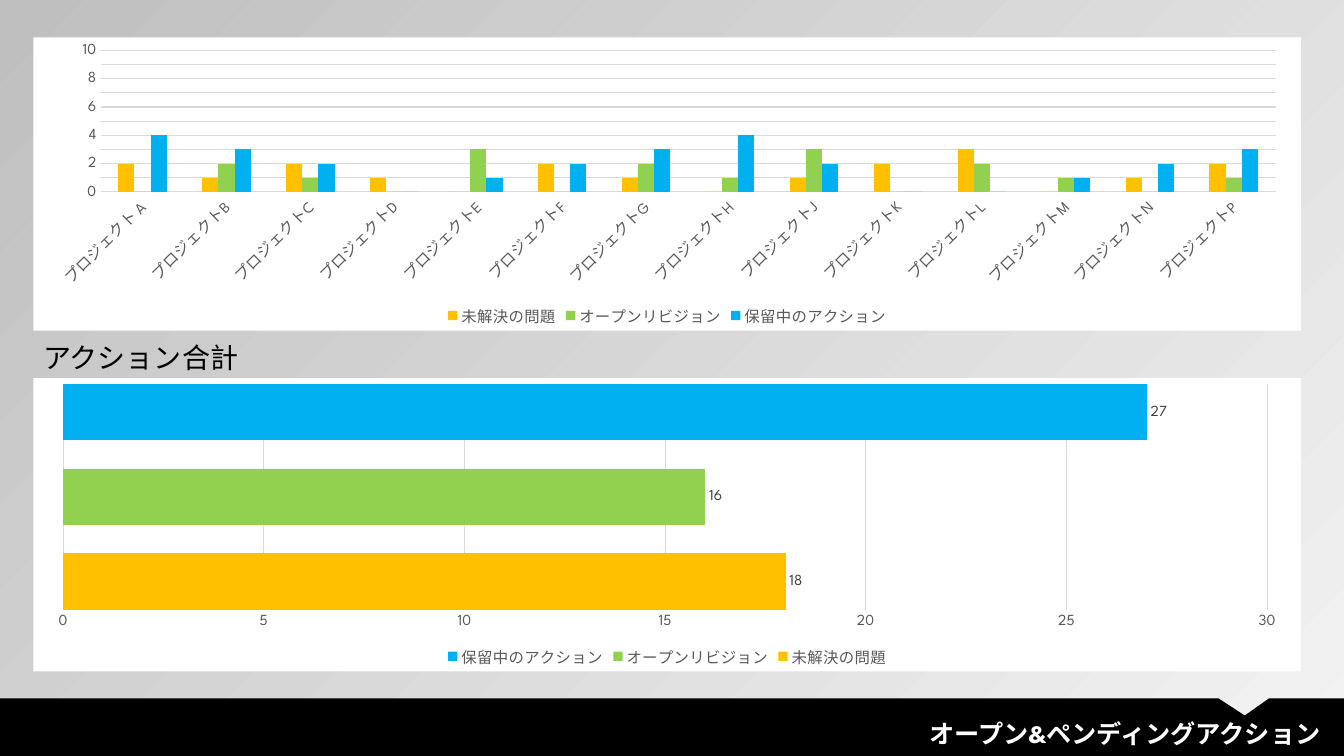
from dataclasses import dataclass

from lxml import etree
from pptx import Presentation
from pptx import util as u
from pptx.chart.data import CategoryChartData
from pptx.dml.color import RGBColor
from pptx.enum import chart as ch
from pptx.enum import text
from pptx.oxml import parse_xml
from pptx.oxml.ns import nsdecls, qn


@dataclass(frozen=True)
class Theme:
    font: str = "League Spartan"
    black: str = "000000"
    white: str = "FFFFFF"
    axis_text: str = "595959"
    label_text: str = "404040"
    grid: str = "D9D9D9"
    backdrop_light: str = "F2F2F2"
    backdrop_dark: str = "BFBFBF"
    issues: str = "FFC000"
    revisions: str = "92D050"
    actions: str = "00B0F0"
    title_size: int = 18
    heading_size: int = 20
    chart_size: int = 11


THEME = Theme()
WIDTH, HEIGHT = u.Cm(33.87), u.Cm(19.05)
PANEL_LEFT, PANEL_WIDTH, PANEL_HEIGHT = u.Cm(0.84), u.Cm(31.95), u.Cm(7.39)

PROJECTS = ["プロジェクト A"] + [f"プロジェクト{letter}" for letter in "BCDEFGHJKLMNP"]
# Name, colour and count per project
MEASURES = [
    ("未解決の問題", THEME.issues, [2, 1, 2, 1, 0, 2, 1, 0, 1, 2, 3, 0, 1, 2]),
    ("オープンリビジョン", THEME.revisions, [0, 2, 1, 0, 3, 0, 2, 1, 3, 0, 2, 1, 0, 1]),
    ("保留中のアクション", THEME.actions, [4, 3, 2, 0, 1, 2, 3, 4, 2, 0, 0, 1, 2, 3]),
]
TOTALS = [(name, color, [sum(counts)]) for name, color, counts in MEASURES]


def rgb(color):
    return RGBColor.from_string(color)


def style_font(font, size, color, bold=False):
    font.name, font.size, font.bold = THEME.font, u.Pt(size), bold
    font.color.rgb = rgb(color)


def paint_background(slide):
    fill = slide.background.fill
    fill.gradient()
    fill.gradient_angle = 135
    colors = (THEME.backdrop_light, THEME.backdrop_dark)
    for stop, color, position in zip(fill.gradient_stops, colors, (0, 1)):
        stop.color.rgb = rgb(color)
        stop.position = position


def add_banner(slide):
    """Black footer band with a notch in its upper edge."""
    top = u.Cm(17.6)
    builder = slide.shapes.build_freeform(0, top)
    builder.add_line_segments([
        (u.Cm(30.71), top), (u.Cm(31.37), u.Cm(18.03)), (u.Cm(31.98), top),
        (WIDTH, top), (WIDTH, HEIGHT), (0, HEIGHT),
    ])
    banner = builder.convert_to_shape()
    banner.shadow.inherit = False
    banner.fill.solid()
    banner.fill.fore_color.rgb = rgb(THEME.black)
    banner.line.fill.background()
    return banner


def write_text(shape, words, size, color, align, wrap, bold=False):
    frame = shape.text_frame
    frame.text = words
    frame.word_wrap = wrap
    frame.auto_size = text.MSO_AUTO_SIZE.SHAPE_TO_FIT_TEXT
    frame.vertical_anchor = text.MSO_ANCHOR.TOP
    paragraph = frame.paragraphs[0]
    paragraph.alignment = align
    paragraph.line_spacing = 1.0
    paragraph.space_before = u.Pt(0)
    style_font(paragraph.font, size, color, bold)


def place_title(slide, banner, words):
    title = slide.shapes.title
    title.left, title.top = u.Cm(10.52), u.Cm(17.98)
    title.width, title.height = u.Cm(23.01), u.Cm(1.02)
    write_text(title, words, THEME.title_size, THEME.white,
               text.PP_ALIGN.RIGHT, True, bold=True)
    # The title stands in front of the banner
    banner._element.addnext(title._element)


def add_heading(slide, words):
    heading = slide.shapes.add_textbox(PANEL_LEFT, u.Cm(8.46), u.Cm(5.51), u.Cm(1.12))
    write_text(heading, words, THEME.heading_size, THEME.black,
               text.PP_ALIGN.LEFT, False)


def fill_panel(chart):
    panel = parse_xml(
        f'<c:spPr {nsdecls("c", "a")}><a:solidFill><a:srgbClr val="{THEME.white}"/>'
        '</a:solidFill><a:ln><a:noFill/></a:ln></c:spPr>')
    chart._chartSpace.find(qn("c:chart")).addnext(panel)


def add_chart_panel(slide, kind, top, categories, measures, gap, overlap):
    data = CategoryChartData(number_format="0")
    data.categories = categories
    for name, _, values in measures:
        data.add_series(name, values)
    chart = slide.shapes.add_chart(
        kind, PANEL_LEFT, top, PANEL_WIDTH, PANEL_HEIGHT, data).chart
    style_font(chart.font, THEME.chart_size, THEME.black)
    fill_panel(chart)
    chart.has_title = False

    chart.has_legend = True
    chart.legend.position = ch.XL_LEGEND_POSITION.BOTTOM
    chart.legend.include_in_layout = False
    style_font(chart.legend.font, THEME.chart_size, THEME.axis_text)

    plot = chart.plots[0]
    plot.vary_by_categories = False
    plot.gap_width, plot.overlap = gap, overlap
    for series, (_, color, _) in zip(plot.series, measures):
        series.format.fill.solid()
        series.format.fill.fore_color.rgb = rgb(color)

    for axis in (chart.category_axis, chart.value_axis):
        axis.major_tick_mark = axis.minor_tick_mark = ch.XL_TICK_MARK.NONE
        style_font(axis.tick_labels.font, THEME.chart_size, THEME.axis_text)
    counts = chart.value_axis
    counts.minimum_scale = 0
    counts.format.line.fill.background()
    counts.has_major_gridlines = True
    rule_line(counts.major_gridlines.format.line)
    return chart


def rule_line(line):
    line.color.rgb = rgb(THEME.grid)
    line.width = u.Pt(0.75)


def add_project_chart(slide):
    chart = add_chart_panel(slide, ch.XL_CHART_TYPE.COLUMN_CLUSTERED, u.Cm(0.94),
                            PROJECTS, MEASURES, gap=219, overlap=0)
    chart.value_axis.maximum_scale = 10
    chart.value_axis.major_unit = 1
    projects = chart.category_axis
    rule_line(projects.format.line)
    # Project names slant upwards at 45 degrees
    slant = projects._element.find(qn("c:txPr")).find(qn("a:bodyPr"))
    slant.set("rot", "-2700000")
    slant.set("vert", "horz")


def add_totals_chart(slide):
    chart = add_chart_panel(slide, ch.XL_CHART_TYPE.BAR_CLUSTERED, u.Cm(9.53),
                            ["1"], TOTALS, gap=0, overlap=-50)
    chart.category_axis.visible = False
    for series in chart.plots[0].series:
        labels = series.data_labels
        labels.show_value = True
        labels.position = ch.XL_LABEL_POSITION.OUTSIDE_END
        style_font(labels.font, THEME.chart_size, THEME.label_text)


def main():
    deck = Presentation()
    deck.slide_width, deck.slide_height = WIDTH, HEIGHT
    slide = deck.slides.add_slide(deck.slide_layouts[5])
    paint_background(slide)
    # Footer
    banner = add_banner(slide)
    place_title(slide, banner, "オープン&ペンディングアクション")
    # Charts
    add_project_chart(slide)
    add_totals_chart(slide)
    add_heading(slide, "アクション合計")
    deck.save("out.pptx")


if __name__ == "__main__":
    main()
